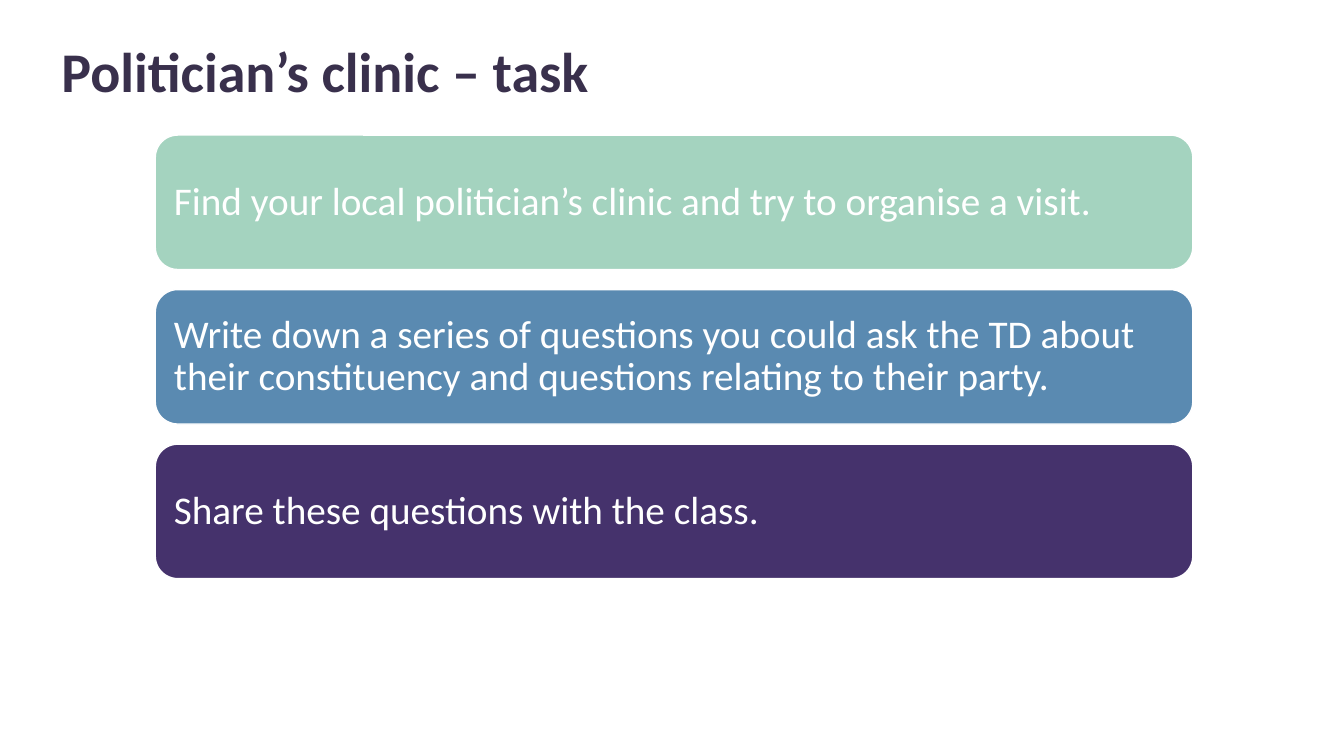
from dataclasses import dataclass

from pptx import Presentation
from pptx.dml.color import RGBColor
from pptx.enum.shapes import MSO_SHAPE
from pptx.enum.text import MSO_ANCHOR, MSO_AUTO_SIZE, PP_ALIGN
from pptx.util import Inches, Pt


@dataclass(frozen=True)
class Theme:
    font: str = "Calibri"
    title_size: int = 40
    task_size: int = 28
    title_color: str = "39304C"
    white: str = "FFFFFF"
    task_fills: tuple = ("A4D3BF", "5A8AB1", "45326C")


THEME = Theme()

TITLE = "Politician’s clinic – task"
TASKS = (
    "Find your local politician’s clinic and try to organise a visit.",
    "Write down a series of questions you could ask the TD about "
    "their constituency and questions relating to their party.",
    "Share these questions with the class.",
)


def write_text(shape, text, *, size, color, bold=False, inset=(0.1, 0.05)):
    """Fill a shape with one left-aligned, vertically centred paragraph."""
    frame = shape.text_frame
    frame.word_wrap = True
    frame.auto_size = MSO_AUTO_SIZE.NONE
    frame.vertical_anchor = MSO_ANCHOR.MIDDLE
    frame.margin_left = frame.margin_right = Inches(inset[0])
    frame.margin_top = frame.margin_bottom = Inches(inset[1])
    para = frame.paragraphs[0]
    para.alignment = PP_ALIGN.LEFT
    para.line_spacing = 0.9
    span = para.add_run()
    span.text = text
    span.font.name = THEME.font
    span.font.size = Pt(size)
    span.font.bold = bold
    span.font.color.rgb = RGBColor.from_string(color)


def place_title(page, left, top, width, height):
    title = page.shapes.title
    title.left, title.top = Inches(left), Inches(top)
    title.width, title.height = Inches(width), Inches(height)
    write_text(title, TITLE, size=THEME.title_size, color=THEME.title_color, bold=True)


def add_task_list(page, left, top, width, height, gap=0.2):
    """Stack the task boxes evenly within the given area."""
    box_height = (height - gap * (len(TASKS) - 1)) / len(TASKS)
    for index, (task, fill) in enumerate(zip(TASKS, THEME.task_fills)):
        box_top = top + index * (box_height + gap)
        box = page.shapes.add_shape(
            MSO_SHAPE.ROUNDED_RECTANGLE,
            Inches(left), Inches(box_top), Inches(width), Inches(box_height),
        )
        box.shadow.inherit = False
        box.fill.solid()
        box.fill.fore_color.rgb = RGBColor.from_string(fill)
        box.line.color.rgb = RGBColor.from_string(THEME.white)
        box.line.width = Pt(1)
        write_text(box, task, size=THEME.task_size, color=THEME.white, inset=(0.12, 0.12))


def main():
    deck = Presentation()
    deck.slide_width, deck.slide_height = Inches(13.33), Inches(7.5)
    title_only = deck.slide_layouts[5]
    page = deck.slides.add_slide(title_only)
    place_title(page, 0.51, 0.4, 11.5, 0.68)
    add_task_list(page, 1.54, 1.34, 10.29, 4.4)
    deck.save("out.pptx")


if __name__ == "__main__":
    main()
